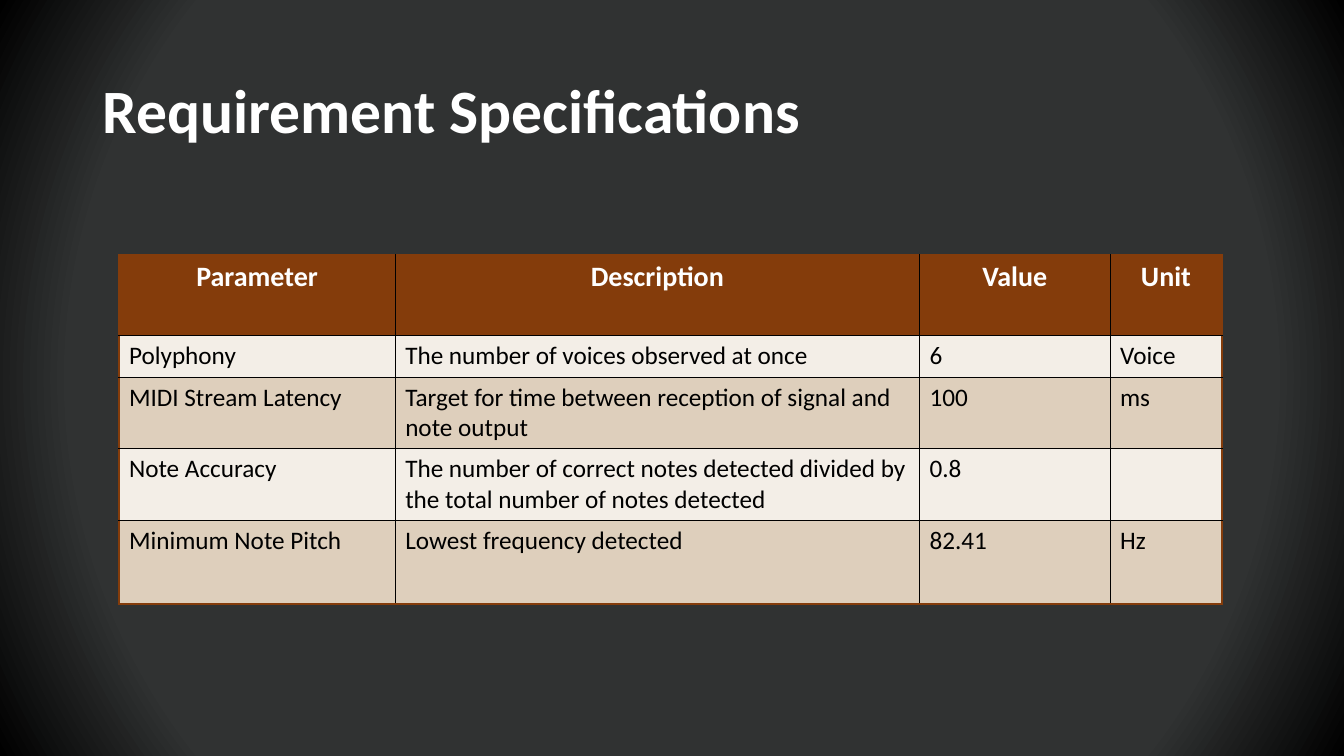
from pptx import Presentation
from pptx.dml.color import RGBColor
from pptx.enum.text import MSO_ANCHOR as Anchor, PP_ALIGN as Align
from pptx.oxml import parse_xml
from pptx.oxml.ns import nsdecls
from pptx.util import Inches, Pt

FONT = "Calibri"
WHITE, BLACK, CHARCOAL = "FFFFFF", "000000", "303232"
BROWN, CREAM, TAN = "843C0B", "F3EEE7", "DECFBC"

COLUMN_WIDTHS = [2.74, 5.2, 1.89, 1.11]
ROW_HEIGHTS = [0.8, 0.41, 0.71, 0.71, 0.83]
REQUIREMENTS = [
    ["Parameter", "Description", "Value", "Unit"],
    ["Polyphony", "The number of voices observed at once", "6", "Voice"],
    ["MIDI Stream Latency",
     "Target for time between reception of signal and note output", "100", "ms"],
    ["Note Accuracy",
     "The number of correct notes detected divided by the total number of notes detected",
     "0.8", ""],
    ["Minimum Note Pitch", "Lowest frequency detected", "82.41", "Hz"],
]


def color(hex_string):
    return RGBColor.from_string(hex_string)


def format_runs(paragraph, size, hex_string, bold=False):
    for run in paragraph.runs:
        run.font.name = FONT
        run.font.size = Pt(size)
        run.font.bold = bold
        run.font.color.rgb = color(hex_string)


def set_background(slide):
    """Radial gradient, dark towards the corners."""
    background = parse_xml(
        f'<p:bg {nsdecls("p", "a")}><p:bgPr><a:gradFill rotWithShape="1"><a:gsLst>'
        f'<a:gs pos="78000"><a:srgbClr val="{CHARCOAL}"/></a:gs>'
        f'<a:gs pos="100000"><a:srgbClr val="{BLACK}"/></a:gs></a:gsLst>'
        '<a:path path="circle"><a:fillToRect l="50000" t="50000" r="50000" b="50000"/>'
        '</a:path></a:gradFill><a:effectLst/></p:bgPr></p:bg>')
    slide.element.cSld.insert(0, background)


def add_title(slide, text):
    box = slide.shapes.add_textbox(Inches(0.92), Inches(0.4), Inches(11.5), Inches(1.45))
    frame = box.text_frame
    frame.word_wrap = True
    frame.vertical_anchor = Anchor.MIDDLE
    frame.text = text
    paragraph = frame.paragraphs[0]
    paragraph.line_spacing = 0.9
    format_runs(paragraph, 44, WHITE, bold=True)


def set_borders(cell, outer_sides):
    """Thin black rules inside the table, thicker brown ones on its edge."""
    properties = cell._tc.get_or_add_tcPr()
    for index, (side, is_outer) in enumerate(outer_sides.items()):
        hex_string, width = (BROWN, 1.5) if is_outer else (BLACK, 0.5)
        properties.insert(index, parse_xml(
            f'<a:{side} {nsdecls("a")} w="{Pt(width)}"><a:solidFill>'
            f'<a:srgbClr val="{hex_string}"/></a:solidFill></a:{side}>'))


def add_requirements_table(slide, rows):
    last_row, last_column = len(rows) - 1, len(rows[0]) - 1
    table = slide.shapes.add_table(
        len(rows), len(rows[0]), Inches(1.18), Inches(2.53),
        Inches(sum(COLUMN_WIDTHS)), Inches(sum(ROW_HEIGHTS))).table
    for column, width in zip(table.columns, COLUMN_WIDTHS):
        column.width = Inches(width)
    for row, height in zip(table.rows, ROW_HEIGHTS):
        row.height = Inches(height)

    for r, values in enumerate(rows):
        is_header = r == 0
        for c, value in enumerate(values):
            cell = table.cell(r, c)
            cell.fill.solid()
            cell.fill.fore_color.rgb = color(
                BROWN if is_header else CREAM if r % 2 else TAN)
            set_borders(cell, {"lnL": c == 0, "lnR": c == last_column,
                               "lnT": r == 0, "lnB": r == last_row})
            cell.text_frame.text = value
            paragraph = cell.text_frame.paragraphs[0]
            if is_header:
                paragraph.alignment = Align.CENTER
                format_runs(paragraph, 20, WHITE, bold=True)
            else:
                format_runs(paragraph, 18, BLACK)


def main():
    presentation = Presentation()
    presentation.slide_width = Inches(13.33)
    presentation.slide_height = Inches(7.5)
    slide = presentation.slides.add_slide(presentation.slide_layouts[6])

    set_background(slide)
    add_title(slide, "Requirement Specifications")
    add_requirements_table(slide, REQUIREMENTS)

    presentation.save("out.pptx")


if __name__ == "__main__":
    main()
